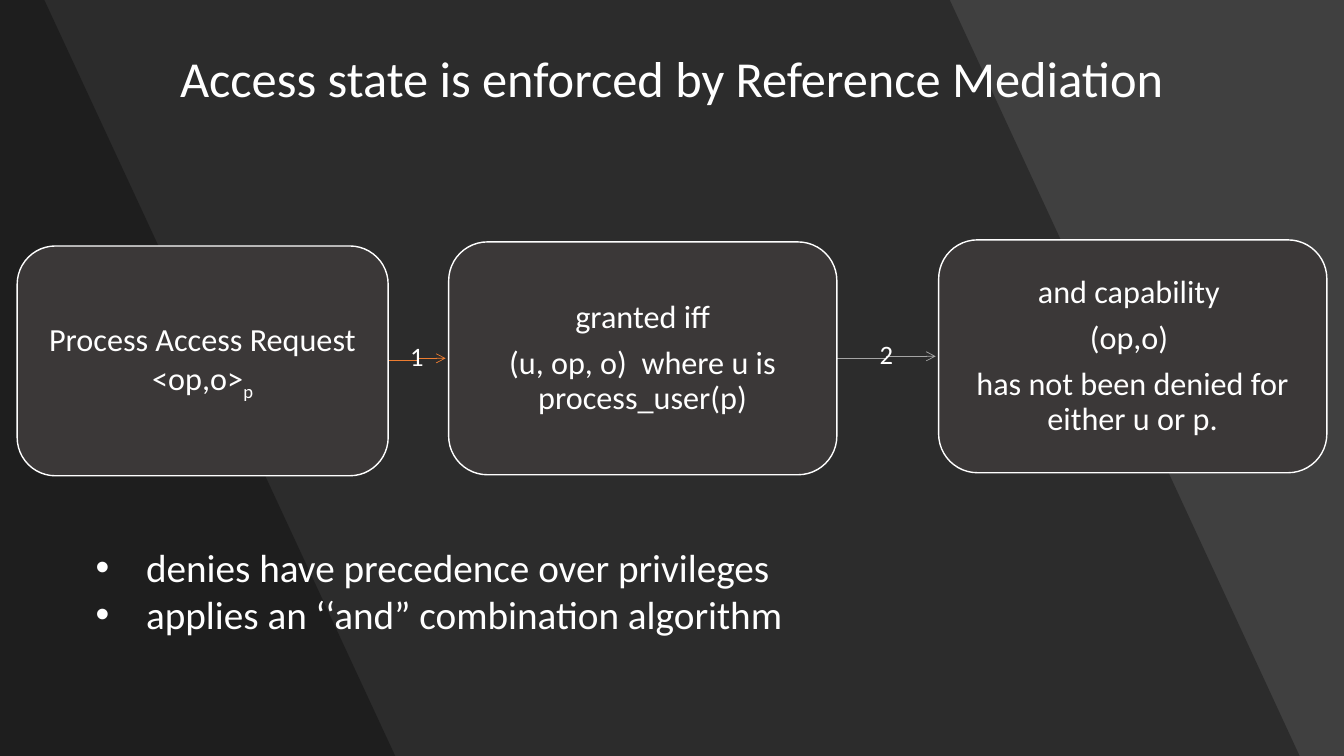
from pptx import Presentation
from pptx.dml.color import RGBColor
from pptx.enum.shapes import MSO_CONNECTOR, MSO_SHAPE
from pptx.enum.text import MSO_ANCHOR, PP_ALIGN
from pptx.oxml.ns import qn
from pptx.util import Inches, Pt
from lxml import etree

ALTERNATE_PROCESS = MSO_SHAPE.FLOWCHART_ALTERNATE_PROCESS
ELBOW = MSO_CONNECTOR.ELBOW
CENTER = PP_ALIGN.CENTER
MIDDLE = MSO_ANCHOR.MIDDLE

SLIDE_W, SLIDE_H = 13.33, 7.5
FONT = "Calibri"
COLORS = {"background": "404040", "shade": "000000", "box": "3B3838",
          "text": "FFFFFF", "first": "ED7D31", "second": "A5A5A5"}

TITLE = "Access state is enforced by Reference Mediation"
NOTES = ["denies have precedence over privileges",
         "applies an ‘‘and” combination algorithm"]
# Each step: left, top, width, height, paragraphs, subscript
STEPS = [
    (0.17, 2.44, 3.68, 2.28, ["Process Access Request <op,o>"], "p"),
    (4.45, 2.4, 3.85, 2.31,
     ["granted iff", "(u, op, o)  where u is process_user(p)"], ""),
    (9.31, 2.38, 3.85, 2.31,
     ["and capability ", "(op,o) ", "has not been denied for either u or p."], ""),
]
ARROWS = [("1", "first"), ("2", "second")]
ARROW_GAP = 0.03
# Right edge of each diagonal band at the slide's top and bottom
BANDS = [(9.42, 12.89), (0.44, 3.92)]


def rgb(name):
    return RGBColor.from_string(COLORS[name])


def write(frame, lines, size, align=None, line_spacing=None, space_after=None):
    frame.word_wrap = True
    frame.text = "\n".join(lines)
    for paragraph in frame.paragraphs:
        paragraph.alignment = align
        paragraph.line_spacing = line_spacing
        if space_after is not None:
            paragraph.space_after = Pt(space_after)
        for run in paragraph.runs:
            style(run, size)


def style(run, size):
    run.font.name = FONT
    run.font.size = Pt(size)
    run.font.color.rgb = rgb("text")


def set_margins(frame, horizontal, vertical):
    frame.margin_left = frame.margin_right = Inches(horizontal)
    frame.margin_top = frame.margin_bottom = Inches(vertical)


def add_text_box(slide, left, top, width, height):
    box = slide.shapes.add_textbox(
        Inches(left), Inches(top), Inches(width), Inches(height))
    return box.text_frame


def add_band(slide, top_edge, bottom_edge):
    builder = slide.shapes.build_freeform(0, 0, scale=Inches(1) / 100)
    corners = [(top_edge, 0), (bottom_edge, SLIDE_H), (0, SLIDE_H)]
    builder.add_line_segments([(x * 100, y * 100) for x, y in corners])
    band = builder.convert_to_shape()
    band.shadow.inherit = False
    band.line.fill.background()
    band.fill.solid()
    band.fill.fore_color.rgb = rgb("shade")
    color = band.fill._xPr.find(".//" + qn("a:srgbClr"))
    etree.SubElement(color, qn("a:alpha"), val="30000")


def add_step(slide, left, top, width, height, lines, subscript):
    box = slide.shapes.add_shape(
        ALTERNATE_PROCESS, Inches(left), Inches(top), Inches(width), Inches(height))
    box.shadow.inherit = False
    box.fill.solid()
    box.fill.fore_color.rgb = rgb("box")
    box.line.color.rgb = rgb("text")
    box.line.width = Pt(1)
    frame = box.text_frame
    frame.vertical_anchor = MIDDLE
    set_margins(frame, 0.08, 0.09)
    write(frame, lines, 23, CENTER, 0.9, 8)
    if subscript:
        run = frame.paragraphs[-1].add_run()
        run.text = subscript
        style(run, 23)
        run.font._element.set("baseline", "-25000")


def add_arrow(slide, source, target, label, color):
    """Join two steps by an elbow arrow with its number at the middle."""
    x1, y1 = source[0] + source[2], source[1] + source[3] / 2
    x2, y2 = target[0] - ARROW_GAP, target[1] + target[3] / 2
    arrow = slide.shapes.add_connector(
        ELBOW, Inches(x1), Inches(y1), Inches(x2), Inches(y2))
    arrow.line.color.rgb = rgb(color)
    arrow.line.width = Pt(0.5)
    etree.SubElement(arrow.line._get_or_add_ln(), qn("a:tailEnd"), type="arrow")
    etree.SubElement(arrow._element.spPr, qn("a:effectLst"))

    width, height = 0.17, 0.3
    frame = add_text_box(slide, (x1 + x2 - width) / 2, y2 - height / 2, width, height)
    frame.vertical_anchor = MIDDLE
    set_margins(frame, 0.01, 0)
    write(frame, [label], 19, CENTER, 0.9, 6.65)


def add_bullets(frame):
    for paragraph in frame.paragraphs:
        properties = paragraph._p.get_or_add_pPr()
        properties.set("marL", str(Inches(0.5)))
        properties.set("indent", str(-Inches(0.5)))
        etree.SubElement(properties, qn("a:buFont"), typeface="Arial")
        etree.SubElement(properties, qn("a:buChar"), char="•")


def main():
    deck = Presentation()
    deck.slide_width, deck.slide_height = Inches(SLIDE_W), Inches(SLIDE_H)
    slide = deck.slides.add_slide(deck.slide_layouts[6])
    slide.background.fill.solid()
    slide.background.fill.fore_color.rgb = rgb("background")

    for edges in BANDS:
        add_band(slide, *edges)
    for source, target, arrow in zip(STEPS, STEPS[1:], ARROWS):
        add_arrow(slide, source, target, *arrow)
    for step in STEPS:
        add_step(slide, *step)

    write(add_text_box(slide, 0, 0.42, SLIDE_W, 0.71), [TITLE], 36, CENTER)
    notes = add_text_box(slide, 0.85, 5.34, 10.35, 1.04)
    write(notes, NOTES, 28)
    add_bullets(notes)
    deck.save("out.pptx")


if __name__ == "__main__":
    main()
